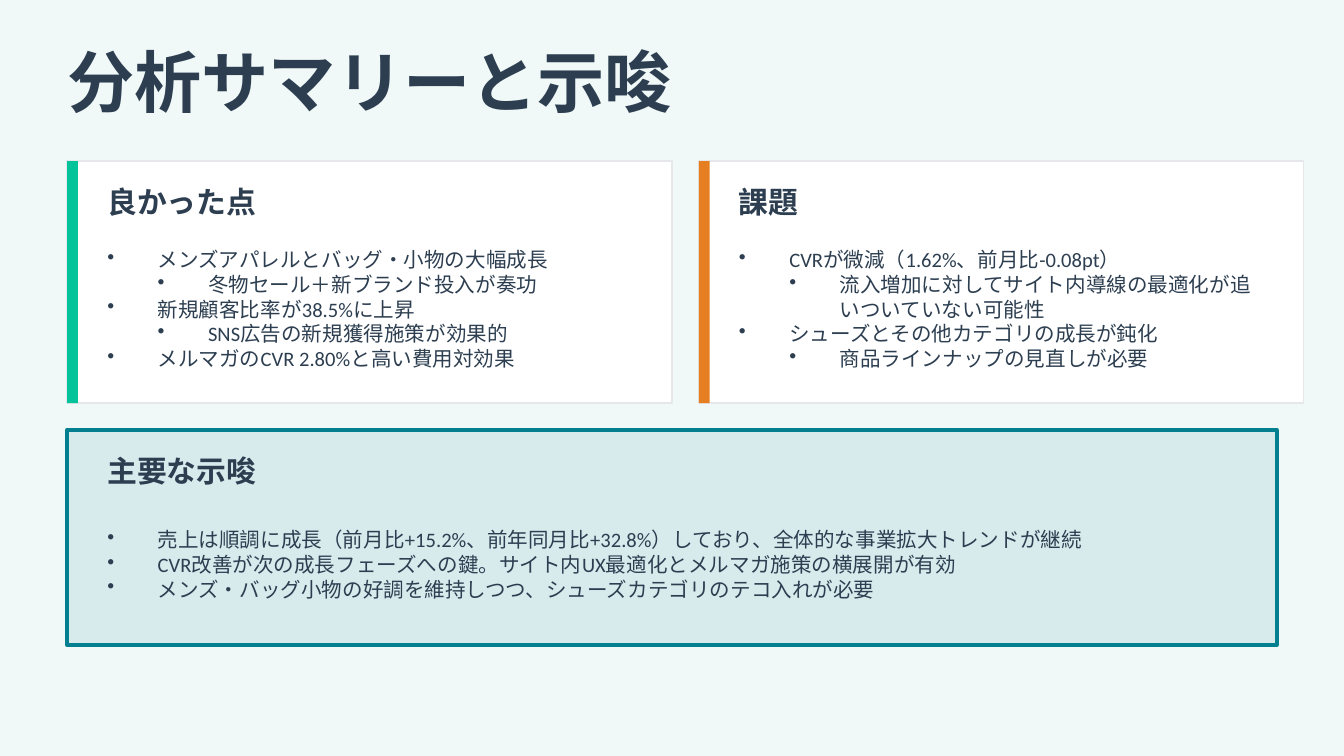
from dataclasses import dataclass

from lxml import etree
from pptx import Presentation
from pptx.dml.color import RGBColor
from pptx.enum.shapes import MSO_SHAPE
from pptx.enum.text import MSO_ANCHOR, MSO_AUTO_SIZE, PP_ALIGN
from pptx.oxml.ns import qn
from pptx.util import Pt

RECTANGLE = MSO_SHAPE.RECTANGLE
MIDDLE = MSO_ANCHOR.MIDDLE
LEFT = PP_ALIGN.LEFT
NO_AUTOFIT = MSO_AUTO_SIZE.NONE
TITLE_ONLY = 5


@dataclass(frozen=True)
class Theme:
    background: str = "F0F8F8"
    ink: str = "2C3E50"
    card: str = "FFFFFF"
    border: str = "E5E7EB"
    good: str = "02C39A"
    issue: str = "E67E22"
    insight: str = "028090"
    title_font: str = "Montserrat"
    heading_font: str = "Arial"
    body_font: str = "Calibri"
    title_size: int = 36
    heading_size: int = 16
    body_size: int = 11


THEME = Theme()
BULLET_INDENT = 27
INSET = 7.2

GOOD_POINTS = [
    (0, "メンズアパレルとバッグ・小物の大幅成長"),
    (1, "冬物セール＋新ブランド投入が奏功"),
    (0, "新規顧客比率が38.5%に上昇"),
    (1, "SNS広告の新規獲得施策が効果的"),
    (0, "メルマガのCVR 2.80%と高い費用対効果"),
]
ISSUES = [
    (0, "CVRが微減（1.62%、前月比-0.08pt）"),
    (1, "流入増加に対してサイト内導線の最適化が追いついていない可能性"),
    (0, "シューズとその他カテゴリの成長が鈍化"),
    (1, "商品ラインナップの見直しが必要"),
]
INSIGHTS = [
    (0, "売上は順調に成長（前月比+15.2%、前年同月比+32.8%）しており、全体的な事業拡大トレンドが継続"),
    (0, "CVR改善が次の成長フェーズへの鍵。サイト内UX最適化とメルマガ施策の横展開が有効"),
    (0, "メンズ・バッグ小物の好調を維持しつつ、シューズカテゴリのテコ入れが必要"),
]


def add_bullet(paragraph, level):
    paragraph.level = level
    properties = paragraph._p.get_or_add_pPr()
    properties.set("marL", str(Pt(BULLET_INDENT * (level + 1))))
    properties.set("indent", str(-Pt(BULLET_INDENT)))
    etree.SubElement(properties, qn("a:buChar")).set("char", "•")


def write_text(shape, lines, *, font, size, bold=False, bullets=False, inset=INSET):
    frame = shape.text_frame
    frame.word_wrap = True
    frame.auto_size = NO_AUTOFIT
    frame.vertical_anchor = MIDDLE
    frame.margin_left = frame.margin_right = Pt(inset)
    frame.margin_top = frame.margin_bottom = Pt(inset / 2)
    for index, (level, text) in enumerate(lines):
        paragraph = frame.add_paragraph() if index else frame.paragraphs[0]
        paragraph.alignment = LEFT
        if bullets:
            add_bullet(paragraph, level)
        run = paragraph.add_run()
        run.text = text
        run.font.name = font
        run.font.size = Pt(size)
        run.font.bold = bold
        run.font.color.rgb = RGBColor.from_string(THEME.ink)


def add_rectangle(slide, box, fill, *, line=None, line_width=1, opacity=None):
    shape = slide.shapes.add_shape(RECTANGLE, *map(Pt, box))
    shape.shadow.inherit = False
    shape.fill.solid()
    shape.fill.fore_color.rgb = RGBColor.from_string(fill)
    if opacity is not None:
        color = shape.fill._xPr.find(".//" + qn("a:srgbClr"))
        etree.SubElement(color, qn("a:alpha")).set("val", str(opacity * 1000))
    if line:
        shape.line.color.rgb = RGBColor.from_string(line)
        shape.line.width = Pt(line_width)
    else:
        shape.line.fill.background()


def add_title(slide, box, text):
    title = slide.shapes.title
    title.left, title.top, title.width, title.height = map(Pt, box)
    write_text(title, [(0, text)], font=THEME.title_font,
               size=THEME.title_size, bold=True, inset=0)


def add_content(slide, box, heading, points):
    left, top, width, height = box
    inner_left, inner_width = left + 14.4, width - 28.8
    heading_box = slide.shapes.add_textbox(
        Pt(inner_left), Pt(top + 10.8), Pt(inner_width), Pt(21.6))
    write_text(heading_box, [(0, heading)], font=THEME.heading_font,
               size=THEME.heading_size, bold=True)
    points_box = slide.shapes.add_textbox(
        Pt(inner_left), Pt(top + 39.6), Pt(inner_width), Pt(height - 50.4))
    write_text(points_box, points, font=THEME.body_font,
               size=THEME.body_size, bullets=True)


def add_card(slide, box, heading, points, accent):
    left, top, width, height = box
    add_rectangle(slide, box, THEME.card, line=THEME.border)
    add_rectangle(slide, (left, top, 5.76, height), accent)
    add_content(slide, box, heading, points)


def add_insight_panel(slide, box, heading, points):
    add_rectangle(slide, box, THEME.insight, line=THEME.insight,
                  line_width=2, opacity=10)
    add_content(slide, box, heading, points)


def main():
    presentation = Presentation()
    presentation.slide_width, presentation.slide_height = Pt(720), Pt(405)
    slide = presentation.slides.add_slide(presentation.slide_layouts[TITLE_ONLY])
    background = slide.background.fill
    background.solid()
    background.fore_color.rgb = RGBColor.from_string(THEME.background)

    margin, card_width, gap = 36, 324, 14.4
    add_title(slide, (margin, 21.6, 648, 43.2), "分析サマリーと示唆")
    cards = [("良かった点", GOOD_POINTS, THEME.good), ("課題", ISSUES, THEME.issue)]
    for column, (heading, points, accent) in enumerate(cards):
        left = margin + column * (card_width + gap)
        add_card(slide, (left, 86.4, card_width, 129.6), heading, points, accent)
    add_insight_panel(slide, (margin, 230.4, 648, 115.2), "主要な示唆", INSIGHTS)
    presentation.save("out.pptx")


if __name__ == "__main__":
    main()
